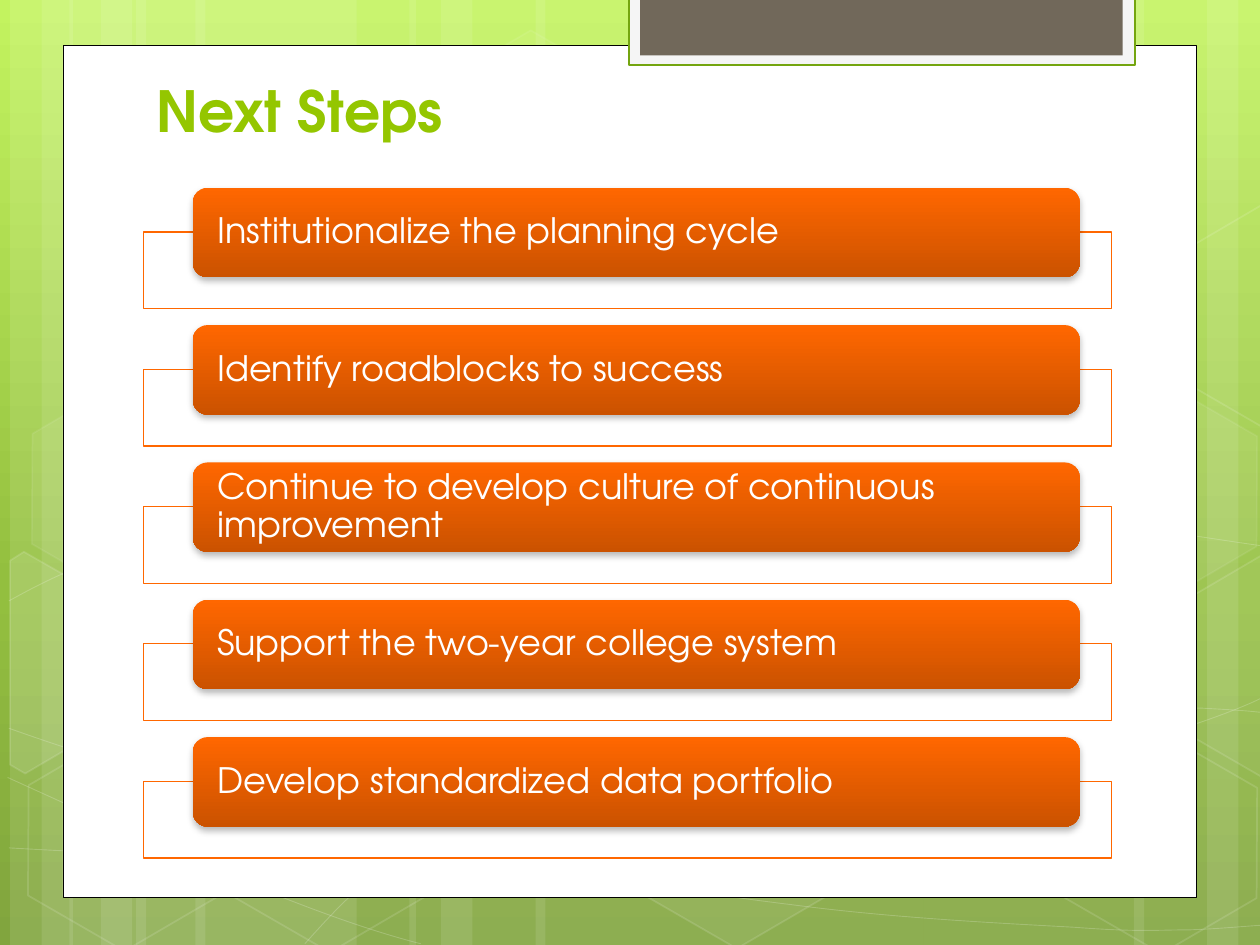
import copy
from typing import NamedTuple, Optional

import pptx
import pptx.dml.color
import pptx.enum.shapes
import pptx.enum.text
import pptx.oxml
import pptx.oxml.ns
import pptx.util

Inches = pptx.util.Inches
Pt = pptx.util.Pt
KIND = pptx.enum.shapes.MSO_SHAPE
ANCHOR = pptx.enum.text.MSO_ANCHOR
SPACE = pptx.oxml.ns.nsdecls("a")
FONT = "TeX Gyre Adventor"
WHITE = "FFFFFF"


class Look(NamedTuple):
    fill: Optional[str] = None
    alpha: int = 100
    line: Optional[str] = None
    width: float = 1
    clear: int = 100  # line opacity in percent


class Box(NamedTuple):
    left: float
    top: float
    width: float
    height: float


class Curve(NamedTuple):
    start: tuple
    bends: list  # two control points and an end, or an end alone for a straight part


class Poly(NamedTuple):
    points: list
    alpha: int


def color(text: str):
    return pptx.dml.color.RGBColor.from_string(text)


def assign(item, values: dict) -> None:
    for name, value in values.items():
        setattr(item, name, value)


def fade(node, alpha: int) -> None:
    """Give the solid colour found in node an opacity in percent."""
    if alpha < 100:
        tint = node.find(".//" + pptx.oxml.ns.qn("a:srgbClr"))
        tint.append(pptx.oxml.parse_xml(f'<a:alpha {SPACE} val="{alpha * 1000}"/>'))


def paint(shape, look: Look) -> None:
    shape.shadow.inherit = False
    if look.fill:
        shape.fill.solid()
        shape.fill.fore_color.rgb = color(look.fill)
        fade(shape._element.xpath("./p:spPr/a:solidFill")[0], look.alpha)
    else:
        shape.fill.background()
    if look.line:
        shape.line.color.rgb = color(look.line)
        shape.line.width = Pt(look.width)
        fade(shape._element.xpath("./p:spPr/a:ln")[0], look.clear)
    else:
        shape.line.fill.background()


def blend(fill, node, stops: list) -> None:
    """Fill from top to bottom through (position, colour) stops."""
    fill.gradient()
    fill.gradient_angle = 270
    chain = node.xpath(".//a:gsLst")[0]
    while len(chain) < len(stops):
        chain.append(copy.deepcopy(chain[-1]))
    for stop, (place, tone) in zip(fill.gradient_stops, stops):
        stop.position = place
        stop.color.rgb = color(tone)


def block(slide, kind, box: Box, look: Look):
    shape = slide.shapes.add_shape(kind, *(Inches(n) for n in box))
    paint(shape, look)
    return shape


def trace(slide, points: list, look: Look, close: bool):
    spots = [(Inches(x), Inches(y)) for x, y in points]
    pen = slide.shapes.build_freeform(*spots[0])
    pen.add_line_segments(spots[1:], close=close)
    shape = pen.convert_to_shape()
    paint(shape, look)
    return shape


def sweep(slide, curve: Curve, look: Look) -> None:
    """Draw the end points, then turn the straight parts into cubic ones."""
    shape = trace(slide, [curve.start] + [part[-1] for part in curve.bends], look, False)
    for node, part in zip(shape._element.xpath(".//a:lnTo"), curve.bends):
        if len(part) == 3:
            spots = "".join(
                f'<a:pt x="{Inches(x) - shape.left}" y="{Inches(y) - shape.top}"/>'
                for x, y in part)
            node.getparent().replace(node, pptx.oxml.parse_xml(
                f"<a:cubicBezTo {SPACE}>{spots}</a:cubicBezTo>"))


def write(frame, text: str, size: float, bold: bool = False, tone: str = WHITE) -> None:
    frame.text = text
    para = frame.paragraphs[0]
    para.alignment = pptx.enum.text.PP_ALIGN.LEFT
    font = para.runs[0].font
    assign(font, {"name": FONT, "size": Pt(size), "bold": bold})
    font.color.rgb = color(tone)


def step(slide, text: str, top: float) -> None:
    block(slide, KIND.RECTANGLE, Box(1.14, top + 0.35, 7.68, 0.61),
          Look(WHITE, 90, "FF6700", 0.75))
    bar = block(slide, KIND.ROUNDED_RECTANGLE, Box(1.53, top, 7.04, 0.71), Look())
    blend(bar.fill, bar._element, [(0, "FF6700"), (1, "CB5200")])
    glow = bar._element.xpath("./p:spPr/a:effectLst")[0]
    glow.append(pptx.oxml.parse_xml(
        f'<a:outerShdw {SPACE} blurRad="{Pt(4)}" dist="{Pt(2)}" '
        'dir="5400000" rotWithShape="0"><a:srgbClr val="000000">'
        '<a:alpha val="28000"/></a:srgbClr></a:outerShdw>'))
    frame = bar.text_frame
    assign(frame, {"word_wrap": True, "vertical_anchor": ANCHOR.MIDDLE,
                   "margin_left": Inches(0.16), "margin_right": Inches(0.16),
                   "margin_top": 0, "margin_bottom": 0})
    write(frame, text, 20)
    frame.paragraphs[0].line_spacing = 0.9


# Stripes as (left, width)
STRIPES = [(1.08, 1.75), (0.08, 0.5), (0.33, 0.83), (1.55, 1.75), (0.55, 0.5), (0.8, 0.83),
           (7.33, 1.75), (9.58, 0.5), (9, 0.83), (4.25, 3.08), (3.25, 0.5), (3.5, 0.83)]
CURVES = [
    Curve((0.07, 6.73), [
        ((0.61, 6.76), (1.15, 6.79), (1.9, 6.78)), ((2.65, 6.77), (3.58, 6.75), (4.58, 6.65)),
        ((5.58, 6.55), (7, 6.36), (7.92, 6.17)), ((8.83, 5.98), (9.77, 5.68), (10.07, 5.51))]),
    Curve((0.07, 4.77), [
        ((0.36, 4.61), (0.65, 4.46), (1.21, 4.31)), ((1.78, 4.16), (2.59, 3.94), (3.47, 3.87)),
        ((4.36, 3.8), (5.44, 3.79), (6.54, 3.87)), ((7.64, 3.95), (9.47, 4.26), (10.07, 4.34))]),
    Curve((0.06, 6.17), [((1.27, 6.72), (2.47, 7.27), (3.34, 7.49))]),
    Curve((0.07, 5.78), [
        ((0.38, 5.89), (0.7, 6), (1.28, 6.16)), ((1.86, 6.31), (2.73, 6.56), (3.57, 6.73)),
        ((4.4, 6.9), (5.45, 7.08), (6.28, 7.18)), ((7.11, 7.29), (8, 7.33), (8.53, 7.36)),
        ((9.05, 7.4), (9.19, 7.38), (9.45, 7.38)), ((9.71, 7.37), (9.89, 7.35), (10.07, 7.34))]),
    Curve((2.42, 7.49), [
        ((2.6, 7.29), (2.78, 7.09), (3.02, 6.91)), ((3.26, 6.73), (3.6, 6.53), (3.88, 6.39)),
        ((4.16, 6.25), (4.33, 6.19), (4.7, 6.09)), ((5.06, 5.99), (5.73, 5.85), (6.08, 5.78)),
        ((6.44, 5.71), (6.49, 5.71), (6.8, 5.69)), ((7.11, 5.66), (7.6, 5.63), (7.94, 5.62)),
        ((8.29, 5.61), (8.86, 5.62), (8.86, 5.62)), ((9.53, 5.62),),
        ((9.71, 5.63), (9.88, 5.64), (9.97, 5.65)), ((10.06, 5.66), (10.03, 5.65), (10.06, 5.66))]),
]
# Hexagons as (left, top, fill opacity, line opacity)
HEXES = [(3.34, 0.36, 4, 8), (4.97, 5.89, 6, 12), (0.11, 5.91, 0, 12), (0.14, 3.12, 7, 8),
         (1.74, 5.92, 0, 12), (8.34, 5.93, 0, 12), (8.34, 3.14, 7, 8)]
# Hexagons cut off by the slide edge
CUTS = [
    Poly([(0.08, 4.45), (0.19, 4.38), (0.96, 4.82), (0.95, 5.7), (0.2, 6.14), (0.08, 6.07)], 10),
    Poly([(9.26, 4.85), (10.01, 4.41), (10.09, 4.46), (10.09, 6.13), (10.02, 6.17),
          (9.26, 5.73)], 4),
    Poly([(9.26, 2.07), (10.01, 1.63), (10.1, 1.68), (10.09, 3.35), (10.02, 3.39),
          (9.26, 2.95)], 0),
]
PANELS = [
    (Box(0.5, 0.36, 9, 6.76), Look(WHITE, line="000000", width=0.5)),
    (Box(4.99, -0.24, 4.02, 0.76), Look("F5F5F5", line="74A510", width=1.25)),
    (Box(5.08, -0.24, 3.83, 0.68), Look("71685A")),
]
STEPS = ["Institutionalize the planning cycle", "Identify roadblocks to success",
         "Continue to develop culture of continuous improvement",
         "Support the two-year college system", "Develop standardized data portfolio"]


def main() -> None:
    deck = pptx.Presentation()
    assign(deck, {"slide_width": Inches(10), "slide_height": Inches(7.5)})
    slide = deck.slides.add_slide(deck.slide_layouts[5])

    # Backdrop
    blend(slide.background.fill, slide._element,
          [(0, "C3F35F"), (0.62, "93BF3F"), (1, "81A53E")])
    for left, width in STRIPES:
        block(slide, KIND.RECTANGLE, Box(left, 0, width, 7.5), Look(WHITE, 10))
    for curve in CURVES:
        sweep(slide, curve, Look(line=WHITE, width=0.5, clear=20))
    for left, top, alpha, clear in HEXES:
        look = Look(WHITE if alpha else None, alpha, WHITE, 1, clear)
        shape = block(slide, KIND.HEXAGON, Box(left, top, 1.75, 1.52), look)
        shape.adjustments[0] = 0.285
        shape.rotation = 30
    for cut in CUTS:
        trace(slide, cut.points, Look(WHITE if cut.alpha else None, cut.alpha, WHITE, 1, 12), True)

    # Page and tab
    for box, look in PANELS:
        block(slide, KIND.RECTANGLE, box, look)

    # Title, raised above the page
    title = slide.shapes.title
    slide.shapes._spTree.append(title._element)
    assign(title, {"left": Inches(1.14), "top": Inches(0.51),
                   "width": Inches(8.27), "height": Inches(0.68)})
    assign(title.text_frame, {"vertical_anchor": ANCHOR.BOTTOM, "word_wrap": True,
                              "auto_size": pptx.enum.text.MSO_AUTO_SIZE.NONE})
    write(title.text_frame, "Next Steps", 32.4, True, "94C600")

    # Steps
    for i, text in enumerate(STEPS):
        step(slide, text, 1.49 + 1.09 * i)

    deck.save("out.pptx")


if __name__ == "__main__":
    main()
